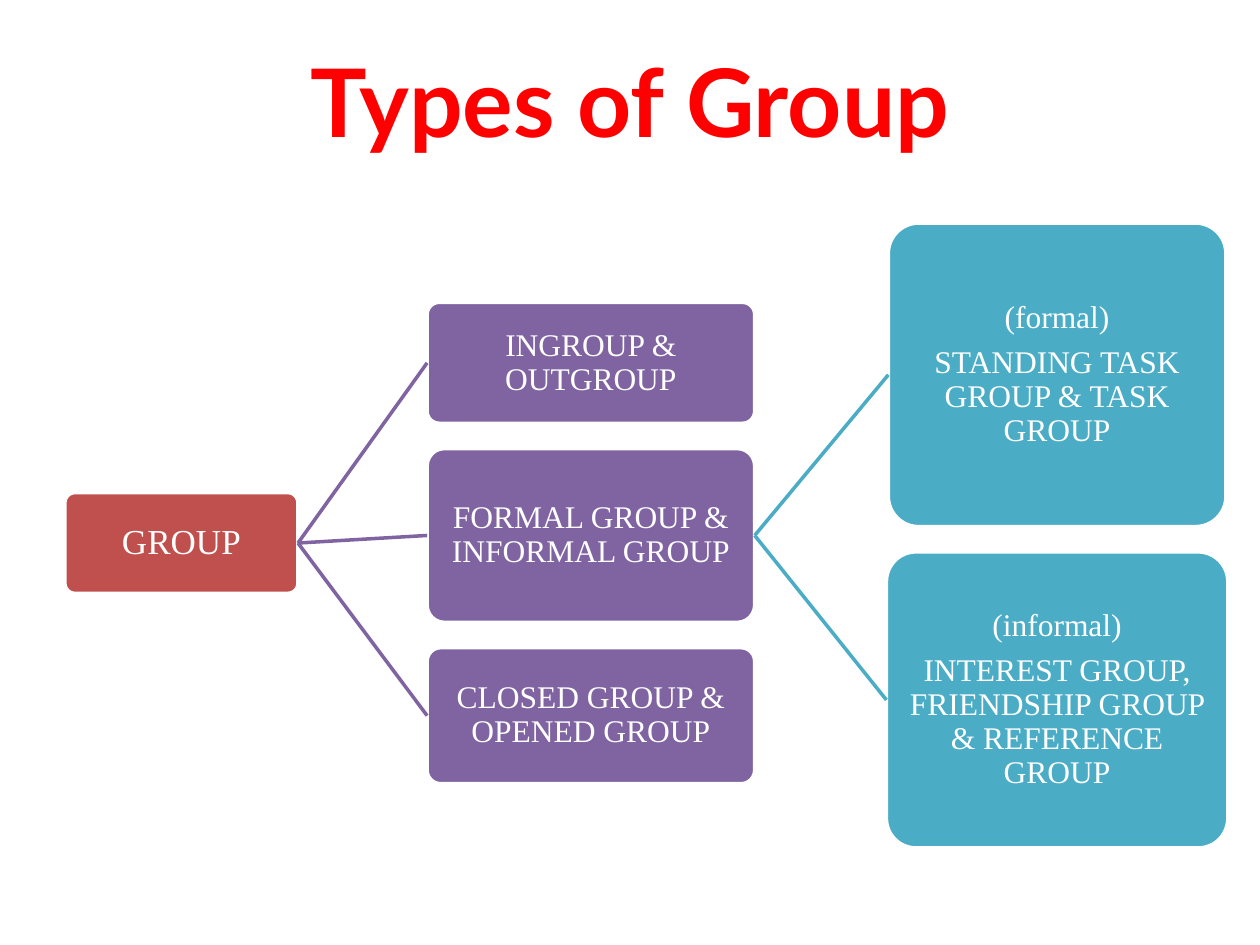
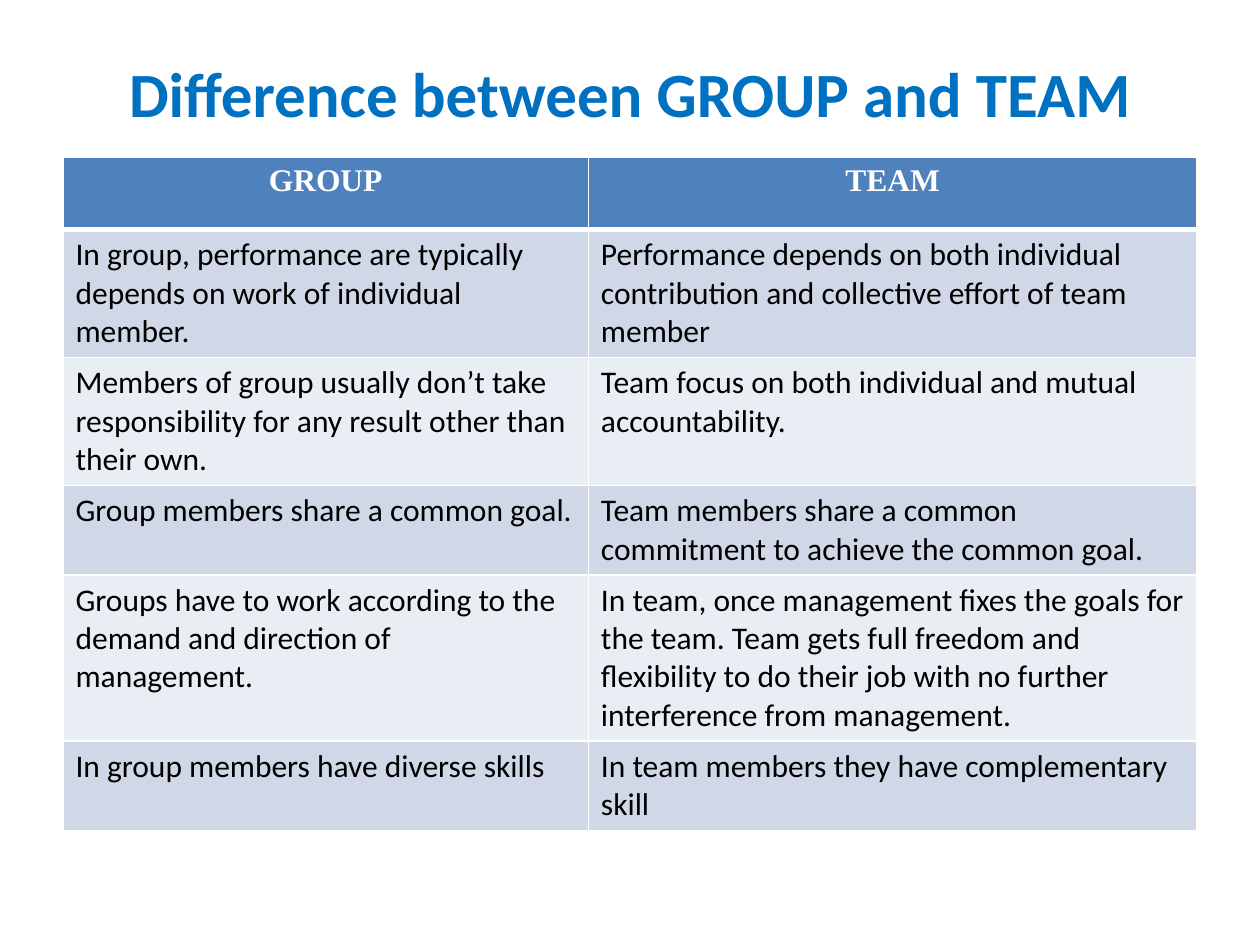
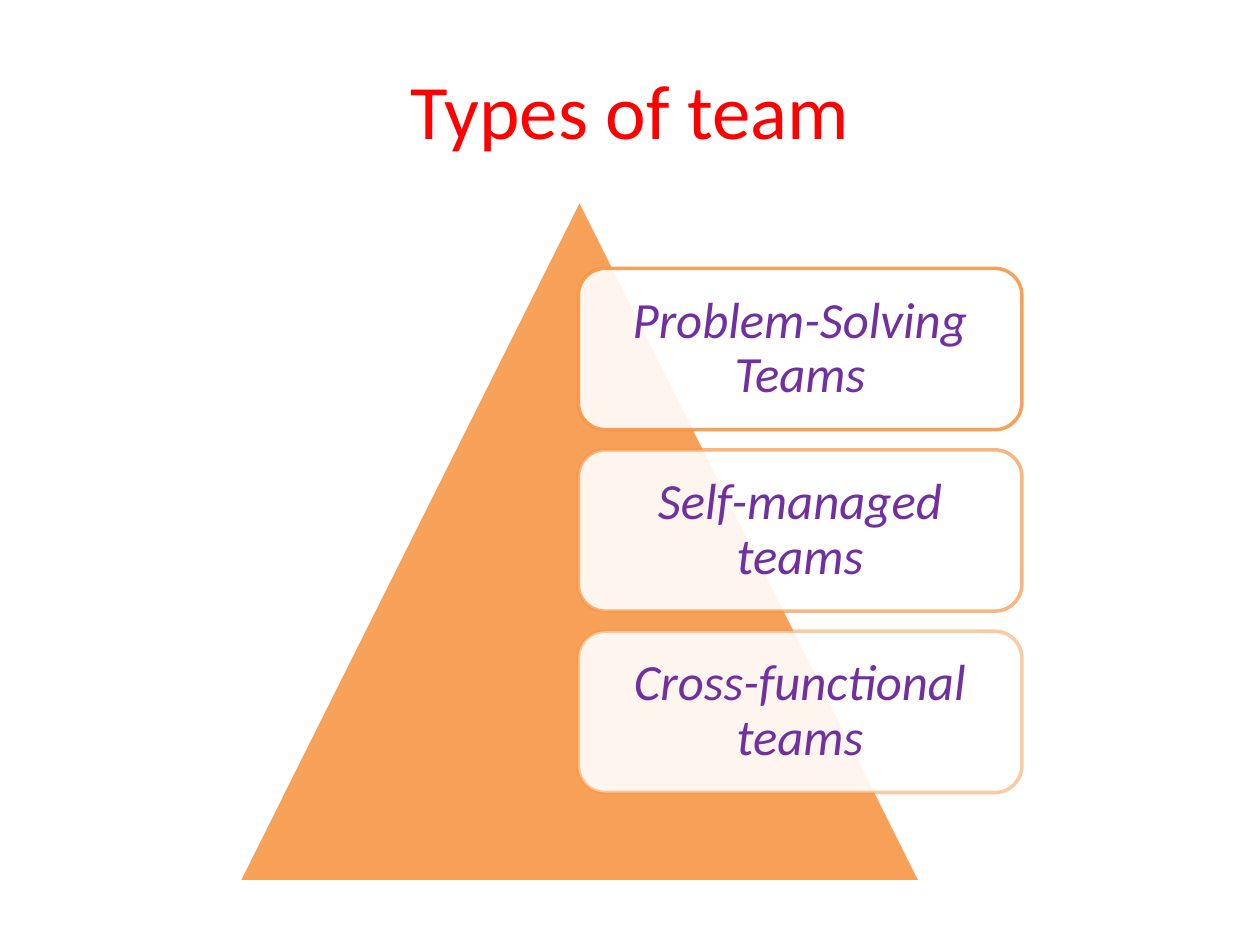
from lxml import etree
from pptx import Presentation
from pptx.dml.color import RGBColor
from pptx.enum.shapes import MSO_CONNECTOR, MSO_SHAPE
from pptx.enum.text import MSO_ANCHOR, PP_ALIGN
from pptx.oxml.ns import qn
from pptx.util import Inches, Pt

ROUNDED = MSO_SHAPE.ROUNDED_RECTANGLE
TRIANGLE = MSO_SHAPE.ISOSCELES_TRIANGLE
STRAIGHT = MSO_CONNECTOR.STRAIGHT
MIDDLE = MSO_ANCHOR.MIDDLE
CENTER, LEFT = PP_ALIGN.CENTER, PP_ALIGN.LEFT

WHITE = RGBColor(0xFF, 0xFF, 0xFF)
BLACK = RGBColor(0x00, 0x00, 0x00)
RED = RGBColor(0xFF, 0x00, 0x00)
BLUE = RGBColor(0x00, 0x70, 0xC0)
HEADER_BLUE = RGBColor(0x4F, 0x81, 0xBD)
BAND_DARK = RGBColor(0xD0, 0xD8, 0xE8)
BAND_LIGHT = RGBColor(0xE9, 0xED, 0xF4)
BRICK = RGBColor(0xC0, 0x50, 0x4D)
PURPLE = RGBColor(0x80, 0x64, 0xA2)
TEAL = RGBColor(0x4B, 0xAC, 0xC6)
ORANGE = RGBColor(0xF7, 0x96, 0x46)
VIOLET = RGBColor(0x70, 0x30, 0xA0)

SANS, SERIF = "Calibri", "Times New Roman"
MARGIN, CONTENT_WIDTH = 0.5, 9

prs = Presentation()
prs.slide_width, prs.slide_height = Inches(10), Inches(7.5)


def add_titled_slide(text, top, height, size, color, font=SANS, bold=False):
    slide = prs.slides.add_slide(prs.slide_layouts[5])
    title = slide.shapes.title
    title.left, title.top = Inches(MARGIN), Inches(top)
    title.width, title.height = Inches(CONTENT_WIDTH), Inches(height)
    title.text_frame.vertical_anchor = MIDDLE
    paragraph = title.text_frame.paragraphs[0]
    paragraph.alignment = CENTER
    run = paragraph.add_run()
    run.text = text
    run.font.name, run.font.size, run.font.bold = font, Pt(size), bold
    run.font.color.rgb = color
    return slide


def add_box(slide, preset, left, top, width, height, fill, line, lines=(), size=18,
            font=SERIF, color=WHITE, italic=False, inset=0.08, alphas=(100, 100)):
    box = slide.shapes.add_shape(preset, Inches(left), Inches(top), Inches(width), Inches(height))
    box.shadow.inherit = False
    box.fill.solid()
    box.fill.fore_color.rgb = fill
    box.line.color.rgb = line
    box.line.width = Pt(2)
    for tint, alpha in zip(box._element.spPr.iter(qn("a:srgbClr")), alphas):
        if alpha < 100:
            etree.SubElement(tint, qn("a:alpha"), val=str(alpha * 1000))
    frame = box.text_frame
    frame.word_wrap = True
    frame.vertical_anchor = MIDDLE
    frame.margin_left = frame.margin_right = Inches(inset)
    frame.margin_top = frame.margin_bottom = Inches(inset)
    for index, text in enumerate(lines):
        paragraph = frame.add_paragraph() if index else frame.paragraphs[0]
        paragraph.alignment = CENTER
        paragraph.line_spacing = 0.9
        if index < len(lines) - 1:
            paragraph.space_after = Pt(0.35 * size)
        run = paragraph.add_run()
        run.text = text
        run.font.name, run.font.size, run.font.italic = font, Pt(size), italic
        run.font.color.rgb = color
    return box


groups = add_titled_slide("Types of Group", 0, 1.58, 54, RED, "Lato", True)
ROW_GAP = 0.2
levels = [
    (1.44, 4.31, BRICK, 20, [(1.85, 0.8, ["GROUP"])]),
    (4.69, 4.31, PURPLE, 18, [
        (2.6, 0.96, ["INGROUP & OUTGROUP"]),
        (2.6, 1.38, ["FORMAL GROUP & INFORMAL GROUP"]),
        (2.6, 1.08, ["CLOSED GROUP & OPENED GROUP"]),
    ]),
    (8.39, 4.25, TEAL, 18, [
        (2.68, 2.41, ["(formal)", "STANDING TASK GROUP & TASK GROUP"]),
        (2.71, 2.35, ["(informal)", "INTEREST GROUP, FRIENDSHIP GROUP & REFERENCE GROUP"]),
    ]),
]
parent = None
for center_x, center_y, color, size, members in levels:
    level_height = sum(height for _, height, _ in members) + ROW_GAP * (len(members) - 1)
    top = center_y - level_height / 2
    boxes = []
    for width, height, lines in members:
        boxes.append(add_box(groups, ROUNDED, center_x - width / 2, top, width, height,
                             color, WHITE, lines, size))
        boxes[-1].adjustments[0] = 0.1
        top += height + ROW_GAP
    if parent is not None:
        for child in boxes:
            branch = groups.shapes.add_connector(STRAIGHT, 0, 0, 0, 0)
            branch.begin_connect(parent, 3)
            branch.end_connect(child, 1)
            branch.line.color.rgb = color
            branch.line.width = Pt(2)
            etree.SubElement(branch._element.spPr, qn("a:effectLst"))
    parent = boxes[len(boxes) // 2]

comparison = add_titled_slide("Difference between GROUP and TEAM", 0.3, 0.87, 36, BLUE, bold=True)
differences = [
    ("GROUP", "TEAM"),
    ("In group, performance are typically depends on work of individual member.",
     "Performance depends on both individual contribution and collective effort of team member"),
    ("Members of group usually don’t take responsibility for any result other than their own.",
     "Team focus on both individual and mutual accountability."),
    ("Group members share a common goal.",
     "Team members share a common commitment to achieve the common goal."),
    ("Groups have to work according to the demand and direction of management.",
     "In team, once management fixes the goals for the team. Team gets full freedom and "
     "flexibility to do their job with no further interference from management."),
    ("In group members have diverse skills",
     "In team members they have complementary skill"),
]
row_heights = [0.57, 0.99, 0.99, 0.57, 0.57, 0.57]
table = comparison.shapes.add_table(len(differences), 2, Inches(MARGIN), Inches(1.25),
                                    Inches(CONTENT_WIDTH), Inches(sum(row_heights))).table
for column, width in zip(table.columns, (4.17, 4.83)):
    column.width = Inches(width)
for row_index, (texts, height) in enumerate(zip(differences, row_heights)):
    table.rows[row_index].height = Inches(height)
    is_header = row_index == 0
    band = HEADER_BLUE if is_header else (BAND_LIGHT, BAND_DARK)[row_index % 2]
    for column_index, text in enumerate(texts):
        cell = table.cell(row_index, column_index)
        for side in "LRTB":
            heavy = (is_header and side == "B") or (row_index == 1 and side == "T")
            border = etree.SubElement(cell._tc.get_or_add_tcPr(), qn(f"a:ln{side}"),
                                      w=str(Pt(3 if heavy else 1)))
            border_fill = etree.SubElement(border, qn("a:solidFill"))
            etree.SubElement(border_fill, qn("a:srgbClr"), val=str(WHITE))
        cell.fill.solid()
        cell.fill.fore_color.rgb = band
        paragraph = cell.text_frame.paragraphs[0]
        paragraph.alignment = CENTER if is_header else LEFT
        run = paragraph.add_run()
        run.text = text
        run.font.name = SERIF if is_header else SANS
        run.font.size, run.font.bold = Pt(18), is_header
        run.font.color.rgb = WHITE if is_header else BLACK

teams = add_titled_slide("Types of team", 0.3, 1.12, 44, RED)
add_box(teams, TRIANGLE, 1.89, 1.58, 5.42, 5.42, ORANGE, WHITE, alphas=(90, 100))
TEAM_TOP, TEAM_PITCH = 2.13, 1.44
team_types = [
    ("Problem-Solving Teams", 90),
    ("Self-managed teams", 70),
    ("Cross-functional teams", 50),
]
for index, (team, outline_alpha) in enumerate(team_types):
    add_box(teams, ROUNDED, 4.59, TEAM_TOP + index * TEAM_PITCH, 3.52, 1.28, WHITE, ORANGE,
            [team], 29, SANS, VIOLET, True, 0.18, (90, outline_alpha))

prs.save("out.pptx")
